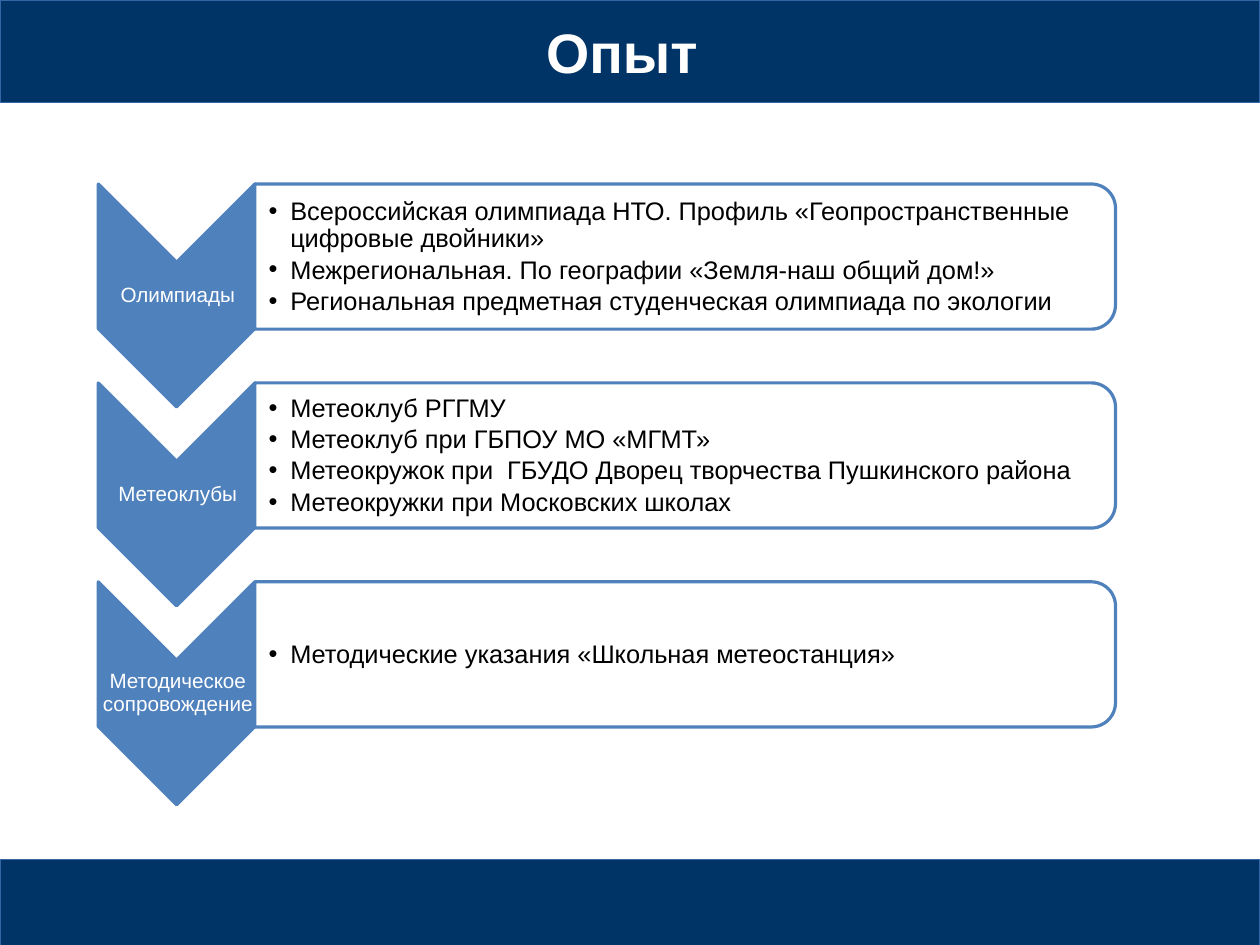
from lxml.etree import SubElement
from pptx import Presentation
from pptx.dml.color import RGBColor
from pptx.enum.shapes import MSO_SHAPE
from pptx.enum.text import MSO_ANCHOR, PP_ALIGN
from pptx.oxml.ns import qn
from pptx.util import Inches, Pt

NAVY, BLUE, EDGE, WHITE, BLACK = "003366", "4F81BD", "3465A4", "FFFFFF", "000000"
WIDTH = 11.02
STEP = 1.74
SECTIONS = [
    ("Олимпиады", [
        "Всероссийская олимпиада НТО. Профиль «Геопространственные цифровые двойники»",
        "Межрегиональная. По географии «Земля-наш общий дом!»",
        "Региональная предметная студенческая олимпиада по экологии",
    ]),
    ("Метеоклубы", [
        "Метеоклуб РГГМУ",
        "Метеоклуб при ГБПОУ МО «МГМТ»",
        "Метеокружок при  ГБУДО Дворец творчества Пушкинского района",
        "Метеокружки при Московских школах",
    ]),
    ("Методическое сопровождение", [
        "Методические указания «Школьная метеостанция»",
    ]),
]

deck = Presentation()
deck.slide_width, deck.slide_height = Pt(793.75), Pt(595.25)
page = deck.slides.add_slide(deck.slide_layouts[6])


def add_panel(preset, place, fill, line, weight, rotation=0):
    panel = page.shapes.add_shape(preset, *map(Inches, place))
    panel.rotation = rotation
    panel.shadow.inherit = False
    panel.fill.solid()
    panel.fill.fore_color.rgb = RGBColor.from_string(fill)
    panel.line.color.rgb = RGBColor.from_string(line)
    panel.line.width = Pt(weight)
    return panel


def write(box, lines, size, color, left=0.01, bold=False, spacing=0.9, bullets=False):
    """Fill the frame of a shape with one paragraph per line, bulleted or centred."""
    frame = box.text_frame
    layout = {"word_wrap": True, "vertical_anchor": MSO_ANCHOR.MIDDLE,
              "margin_left": Inches(left), "margin_right": Inches(0.01),
              "margin_top": Inches(0.01), "margin_bottom": Inches(0.01)}
    for name, value in layout.items():
        setattr(frame, name, value)
    for index, line in enumerate(lines):
        para = frame.add_paragraph() if index else frame.paragraphs[0]
        para.line_spacing = spacing
        para.alignment = PP_ALIGN.LEFT if bullets else PP_ALIGN.CENTER
        if bullets:
            para.space_after = Pt(2.4)
            properties = para._p.get_or_add_pPr()
            properties.set("marL", str(Inches(0.19)))
            properties.set("indent", str(Inches(-0.19)))
            SubElement(properties, qn("a:buFont"), typeface="Arial")
            SubElement(properties, qn("a:buChar"), char="•")
        span = para.add_run()
        span.text = line
        span.font.color.rgb = RGBColor.from_string(color)
        for name, value in {"size": Pt(size), "name": "Arial", "bold": bold}.items():
            setattr(span.font, name, value)


for row, (heading, items) in enumerate(SECTIONS):
    offset = row * STEP
    add_panel(MSO_SHAPE.CHEVRON, (0.57, 1.9 + offset, 1.95, 1.37), BLUE, BLUE, 2, 90)
    label = page.shapes.add_textbox(*map(Inches, (0.87, 2.29 + offset, 1.37, 0.59)))
    write(label, [heading], 13, WHITE)
    add_panel(MSO_SHAPE.ROUND_2_SAME_RECTANGLE, (5.36, -1.52 + offset, 1.27, 7.53),
              WHITE, BLUE, 2, 90)
    details = page.shapes.add_textbox(*map(Inches, (2.23, 1.68 + offset, 7.47, 1.14)))
    write(details, items, 16, BLACK, left=0.12, bullets=True)

header = add_panel(MSO_SHAPE.RECTANGLE, (0, 0, WIDTH, 0.9), NAVY, EDGE, 0.75)
write(header, ["Опыт "], 35, WHITE, bold=True, spacing=1.0)
add_panel(MSO_SHAPE.RECTANGLE, (0, 7.52, WIDTH, 0.75), NAVY, EDGE, 0.75)

deck.save("out.pptx")
